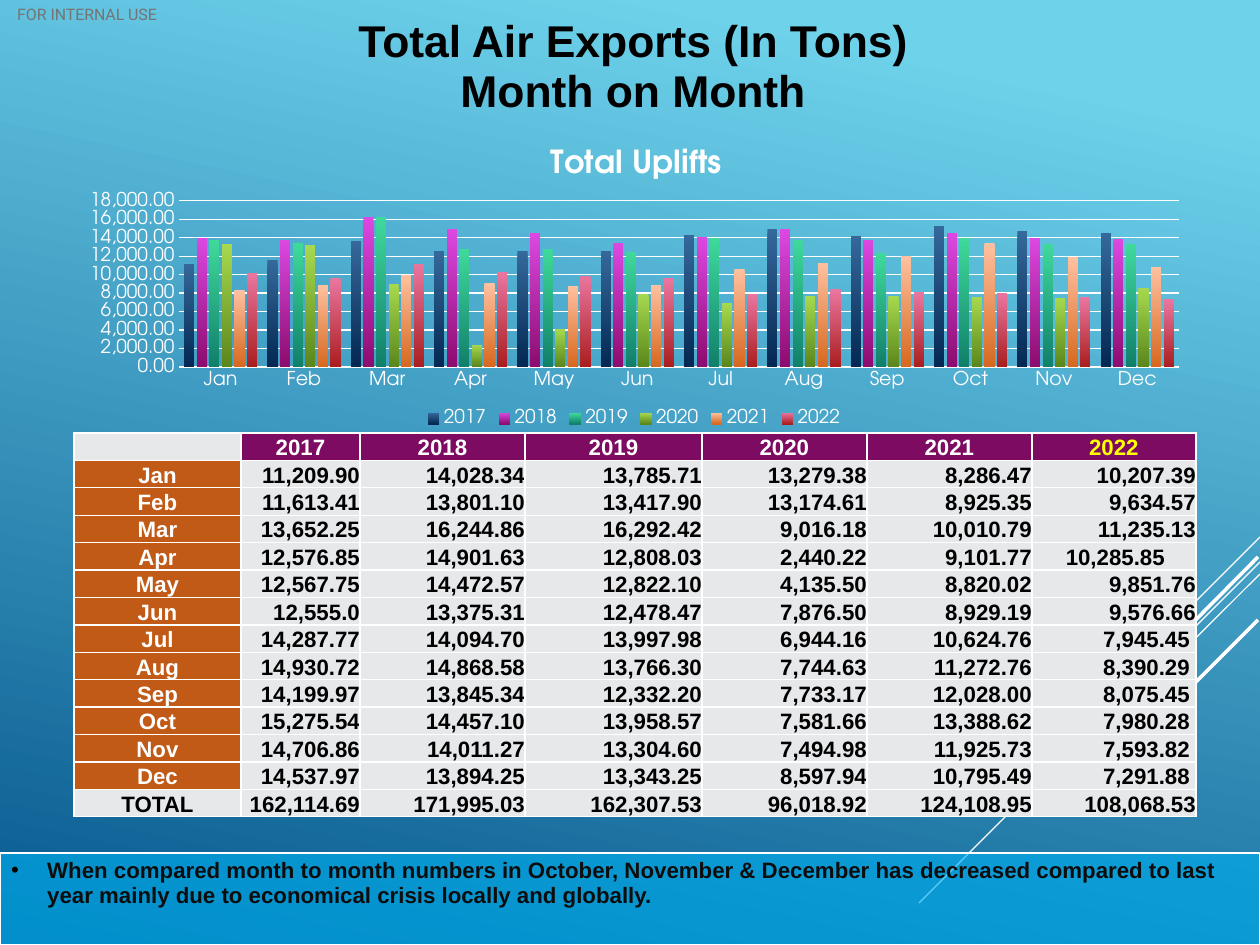
"""Build the monthly air export slide with its column chart, table and remark."""
from lxml import etree
from pptx import Presentation
from pptx import util as u
from pptx.chart.data import CategoryChartData
from pptx.dml.color import RGBColor
from pptx.enum import chart as charts, shapes, text
from pptx.oxml import parse_xml
from pptx.oxml.ns import nsdecls, qn

PX = 8000


class Theme:
    sans, tag_font, chart_font = "Arial", "Roboto", "TeX Gyre Adventor"
    title, chart_title, body, axis, tag = 28, 20, 14, 12, 10
    white, black, gray, ink, yellow = "FFFFFF", "000000", "747474", "0D0D0D", "FFFF00"
    header, month, cell, note = "7C0B61", "C15A16", "E7E8EA", "00B0F0"
    sky = ((0.1, "6ED2EB"), (1, "06588E"))
    years = {
        "2017": ((0, "35699B"), (1, "042853")),
        "2018": ((0, "DC48E1"), (1, "8D0C6F")),
        "2019": ((0, "3FD99B"), (1, "11806A")),
        "2020": ((0, "A6D94E"), (1, "5B871B")),
        "2021": ((0, "FFC1A0"), (1, "D7681F")),
        "2022": ((0, "EA76A0"), (1, "AA1E1F")),
    }


def blend(fill, stops, clockwise):
    fill.gradient()
    fill.gradient_angle = 360 - clockwise
    for stop, (position, color) in zip(fill.gradient_stops, stops):
        stop.position = position
        stop.color.rgb = RGBColor.from_string(color)


def style(font, size, color, name=Theme.sans, bold=False):
    font.size, font.name, font.bold = u.Pt(size), name, bold
    font.color.rgb = RGBColor.from_string(color)


uplifts = {
    "Jan": "11,209.90 14,028.34 13,785.71 13,279.38 8,286.47 10,207.39",
    "Feb": "11,613.41 13,801.10 13,417.90 13,174.61 8,925.35 9,634.57",
    "Mar": "13,652.25 16,244.86 16,292.42 9,016.18 10,010.79 11,235.13",
    "Apr": "12,576.85 14,901.63 12,808.03 2,440.22 9,101.77 10,285.85",
    "May": "12,567.75 14,472.57 12,822.10 4,135.50 8,820.02 9,851.76",
    "Jun": "12,555.0 13,375.31 12,478.47 7,876.50 8,929.19 9,576.66",
    "Jul": "14,287.77 14,094.70 13,997.98 6,944.16 10,624.76 7,945.45",
    "Aug": "14,930.72 14,868.58 13,766.30 7,744.63 11,272.76 8,390.29",
    "Sep": "14,199.97 13,845.34 12,332.20 7,733.17 12,028.00 8,075.45",
    "Oct": "15,275.54 14,457.10 13,958.57 7,581.66 13,388.62 7,980.28",
    "Nov": "14,706.86 14,011.27 13,304.60 7,494.98 11,925.73 7,593.82",
    "Dec": "14,537.97 13,894.25 13,343.25 8,597.94 10,795.49 7,291.88",
}
totals = "162,114.69 171,995.03 162,307.53 96,018.92 124,108.95 108,068.53"
latest_insets = {"Apr": 31} | dict.fromkeys(["Jul", "Aug", "Sep", "Oct", "Nov", "Dec"], 6)

deck = Presentation()
deck.slide_width, deck.slide_height = 1260 * PX, 945 * PX
slide = deck.slides.add_slide(deck.slide_layouts[6])
blend(slide.background.fill, Theme.sky, 102)

for x1, y1, x2, y2, weight in (
    (1260, 537, 1156, 641, 0.75),
    (1260, 562, 919, 903, 0.75),
    (1260, 574, 1043, 790, 0.75),
    (1258, 557, 1061, 756, 2.25),
    (1258, 620, 1114, 764, 2.25),
):
    ray = slide.shapes.add_connector(
        shapes.MSO_CONNECTOR.STRAIGHT, x1 * PX, y1 * PX, x2 * PX, y2 * PX)
    ray.line.color.rgb = RGBColor.from_string(Theme.white)
    ray.line.width = u.Pt(weight)
    etree.SubElement(ray._element.spPr, qn("a:effectLst"))

for lines, box, size, color, name, bold in (
    (["FOR INTERNAL USE"], (0, 0, 174, 30), Theme.tag, Theme.gray, Theme.tag_font, False),
    (["Total Air Exports (In Tons)", "Month on Month"], (66, 29, 1134, 77),
     Theme.title, Theme.black, Theme.sans, True),
):
    heading = slide.shapes.add_textbox(*(v * PX for v in box)).text_frame
    heading.word_wrap = True
    heading.vertical_anchor = text.MSO_ANCHOR.MIDDLE
    heading.margin_left = heading.margin_right = heading.margin_top = heading.margin_bottom = 0
    heading.text = "\n".join(lines)
    for line in heading.paragraphs:
        line.alignment, line.line_spacing = text.PP_ALIGN.CENTER, 0.93
        style(line.font, size, color, name, bold)

note = slide.shapes.add_shape(
    shapes.MSO_SHAPE.RECTANGLE, 0, 853 * PX, 1260 * PX, 92 * PX)
note.shadow.inherit = False
note.fill.solid()
note.fill.fore_color.rgb = RGBColor.from_string(Theme.note)
tint = note._element.spPr.find(qn("a:solidFill"))[0]
etree.SubElement(tint, qn("a:alpha"), val="63000")
note.line.color.rgb = RGBColor.from_string(Theme.white)
note.line.width = u.Pt(0.75)
note.text_frame.vertical_anchor = text.MSO_ANCHOR.TOP
remark = note.text_frame.paragraphs[0]
remark.text = (
    "When compared month to month numbers in October, November & December has decreased "
    "compared to last year mainly due to economical crisis locally and globally.")
remark.alignment, remark.line_spacing = text.PP_ALIGN.LEFT, 0.93
style(remark.font, Theme.body, Theme.ink, bold=True)
indents = remark._p.get_or_add_pPr()
indents.set("marL", str(36 * PX))
indents.set("indent", str(-36 * PX))
for bullet in (
    f'<a:buClr {nsdecls("a")}><a:srgbClr val="{Theme.black}"/></a:buClr>',
    f'<a:buFont {nsdecls("a")} typeface="{Theme.sans}"/>',
    f'<a:buChar {nsdecls("a")} char="•"/>',
):
    indents.find(qn("a:defRPr")).addprevious(parse_xml(bullet))

rows = [["", *Theme.years]]
rows += [[month, *tons.split()] for month, tons in uplifts.items()]
rows += [["TOTAL", *totals.split()]]
widths = (167, 119, 165, 177, 165, 165, 164)
table = slide.shapes.add_table(
    len(rows), len(widths), 74 * PX, 433 * PX, sum(widths) * PX, 384 * PX).table
table.first_row = table.horz_banding = False
for column, width in zip(table.columns, widths):
    column.width = width * PX
for r, row in enumerate(rows):
    for c, entry in enumerate(row):
        cell = table.cell(r, c)
        cell.margin_left = cell.margin_right = cell.margin_top = cell.margin_bottom = 0
        cell.vertical_anchor = text.MSO_ANCHOR.BOTTOM
        fill, color = Theme.cell, Theme.black
        if r == 0 and c:
            fill, color = Theme.header, Theme.yellow if entry == "2022" else Theme.white
        elif c == 0 and entry in uplifts:
            fill, color = Theme.month, Theme.white
        elif c == 6:
            cell.margin_right = latest_insets.get(row[0], 0) * PX
        for side in "LRTB":
            cell._tc.get_or_add_tcPr().append(parse_xml(
                f'<a:ln{side} {nsdecls("a")} w="12700"><a:solidFill>'
                f'<a:srgbClr val="{Theme.white}"/></a:solidFill></a:ln{side}>'))
        cell.fill.solid()
        cell.fill.fore_color.rgb = RGBColor.from_string(fill)
        cell.text = entry
        figure = cell.text_frame.paragraphs[0]
        figure.alignment = text.PP_ALIGN.RIGHT if r and c else text.PP_ALIGN.CENTER
        figure.line_spacing = 0.93
        style(figure.font, Theme.body, color, bold=True)

monthly = CategoryChartData(number_format="#,##0.00")
monthly.categories = list(uplifts)
for y, year in enumerate(Theme.years):
    tons = [float(line.split()[y].replace(",", "")) for line in uplifts.values()]
    monthly.add_series(year, [round(value, -2) for value in tons])
chart = slide.shapes.add_chart(
    charts.XL_CHART_TYPE.COLUMN_CLUSTERED, 67 * PX, 123 * PX, 1134 * PX, 309 * PX, monthly).chart
style(chart.font, Theme.axis, Theme.white, Theme.chart_font)
chart.has_title = True
caption = chart.chart_title.text_frame.paragraphs[0]
caption.text = "Total Uplifts"
style(caption.font, Theme.chart_title, Theme.white, Theme.chart_font, True)
chart.has_legend = True
chart.legend.position = charts.XL_LEGEND_POSITION.BOTTOM
chart.legend.include_in_layout = False
style(chart.legend.font, Theme.axis, Theme.white, Theme.chart_font)

months, scale = chart.category_axis, chart.value_axis
for axis in (months, scale):
    axis.major_tick_mark = axis.minor_tick_mark = charts.XL_TICK_MARK.NONE
    style(axis.tick_labels.font, Theme.axis, Theme.white, Theme.chart_font)
months.format.line.color.rgb = RGBColor.from_string(Theme.white)
months.format.line.width = u.Pt(1)
scale.format.line.fill.background()
scale.minimum_scale, scale.maximum_scale, scale.major_unit = 0, 18000, 2000
scale.tick_labels.number_format = "#,##0.00"
scale.tick_labels.number_format_is_linked = False
scale.major_gridlines.format.line.color.rgb = RGBColor.from_string(Theme.white)
scale.major_gridlines.format.line.width = u.Pt(0.75)

bars = chart.plots[0]
bars.gap_width, bars.overlap, bars.vary_by_categories = 100, -24, False
for series in bars.series:
    blend(series.format.fill, Theme.years[series.name], 90)

plot_area = chart._chartSpace.chart.plotArea
for part, index, places in (
    (plot_area, 0, {"layoutTarget": "inner", "xMode": "edge", "yMode": "edge",
                    "x": 112 / 1134, "y": 78 / 309, "w": 1000 / 1134, "h": 166 / 309}),
    (chart.chart_title._element, 1, {"xMode": "edge", "yMode": "edge",
                                     "x": 478 / 1134, "y": 17 / 309}),
):
    for automatic in part.findall(qn("c:layout")):
        part.remove(automatic)
    fields = "".join(f'<c:{key} val="{value}"/>' for key, value in places.items())
    part.insert(index, parse_xml(
        f'<c:layout {nsdecls("c")}><c:manualLayout>{fields}</c:manualLayout></c:layout>'))

deck.save("out.pptx")
